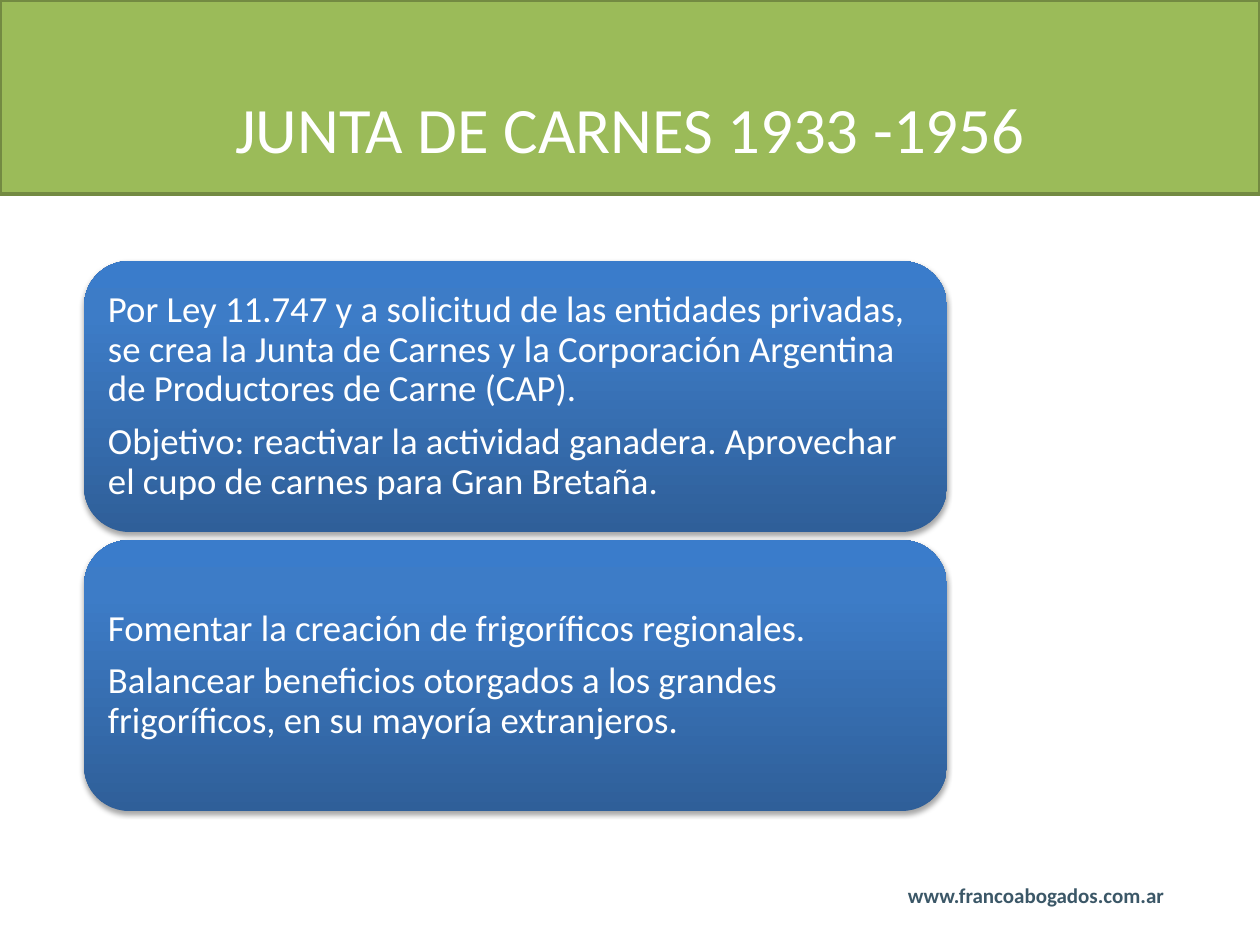
from lxml import etree
from pptx import Presentation
from pptx.dml.color import RGBColor
from pptx.enum import shapes, text
from pptx.oxml import parse_xml
from pptx.oxml.ns import nsdecls, qn
from pptx import util as u

PX_PER_INCH = 126


def px(length):
    return u.Emu(round(length * 914400 / PX_PER_INCH))


def color(value):
    return RGBColor.from_string(value)


class SlideBuilder:
    font = "Calibri"
    white = "FFFFFF"
    header_fill, header_line = "9BBB59", "738A42"
    footer_color = "3B5767"
    card_stops = [(0, "2F5F99"), (80, "3D7CC7"), (100, "3A7CCB")]

    def __init__(self, page):
        self.page = page

    def fill_text(self, box, paragraphs, size, ink, margins, bold=False, **formats):
        frame = box.text_frame
        settings = {"word_wrap": True, "vertical_anchor": text.MSO_ANCHOR.MIDDLE}
        sides = ("left", "top", "right", "bottom")
        settings.update({f"margin_{side}": px(m) for side, m in zip(sides, margins)})
        for name, value in settings.items():
            setattr(frame, name, value)
        for index, words in enumerate(paragraphs):
            para = frame.add_paragraph() if index else frame.paragraphs[0]
            for name, value in formats.items():
                setattr(para, name, value)
            span = para.add_run()
            span.text = words
            for name, value in {"name": self.font, "size": u.Pt(size), "bold": bold}.items():
                setattr(span.font, name, value)
            span.font.color.rgb = color(ink)

    def shape(self, kind, *place):
        shape = self.page.shapes.add_shape(kind, *map(px, place))
        shape.shadow.inherit = False
        return shape

    def text_box(self, place, paragraphs, size, ink, margins, **formats):
        box = self.page.shapes.add_textbox(*map(px, place))
        self.fill_text(box, paragraphs, size, ink, margins, **formats)

    def header(self, place, title):
        band = self.shape(shapes.MSO_SHAPE.RECTANGLE, *place)
        band.fill.solid()
        band.fill.fore_color.rgb = color(self.header_fill)
        band.line.color.rgb = color(self.header_line)
        band.line.width = u.Pt(2)
        # The deep top margin sets the title low in the band
        self.fill_text(band, [title], 37, self.white, (12, 77, 12, 6),
                       alignment=text.PP_ALIGN.CENTER, line_spacing=0.9)

    def card(self, left, top, width, height, paragraphs):
        card = self.shape(shapes.MSO_SHAPE.ROUNDED_RECTANGLE, left, top, width, height)
        card.line.fill.background()
        self.shade(card)
        inset = 13
        place = (left + inset, top + inset, width - 2 * inset, height - 2 * inset)
        self.text_box(place, paragraphs, 21, self.white, (11,) * 4,
                      alignment=text.PP_ALIGN.LEFT, line_spacing=0.9, space_after=u.Pt(7.35))

    def shade(self, card):
        """Three-stop upward gradient and a soft shadow below."""
        stops = "".join(f'<a:gs pos="{pos * 1000}"><a:srgbClr val="{ink}"/></a:gs>'
                        for pos, ink in self.card_stops)
        gradient = parse_xml(f'<a:gradFill {nsdecls("a")} rotWithShape="1"><a:gsLst>{stops}</a:gsLst>'
                             '<a:lin ang="16200000" scaled="0"/></a:gradFill>')
        properties = card.element.spPr
        properties.find(qn("a:prstGeom")).addnext(gradient)
        shadow = etree.SubElement(properties.find(qn("a:effectLst")), qn("a:outerShdw"),
                                  blurRad=str(int(u.Pt(3.1))), dist=str(int(u.Pt(1.8))),
                                  dir="5400000", rotWithShape="0")
        ink = etree.SubElement(shadow, qn("a:srgbClr"), val="000000")
        etree.SubElement(ink, qn("a:alpha"), val="35000")


def main():
    deck = Presentation()
    deck.slide_width, deck.slide_height = px(1260), px(945)
    builder = SlideBuilder(deck.slides.add_slide(deck.slide_layouts[6]))

    # Footer address
    builder.text_box((896, 876, 300, 38), ["www.francoabogados.com.ar"], 12,
                     builder.footer_color, (12, 6, 12, 6), bold=True)

    # Title band
    builder.header((0, 0, 1260, 194), "JUNTA DE CARNES 1933 -1956")

    # Stacked cards
    cards = [
        ["Por Ley 11.747 y a solicitud de las entidades privadas, se crea la Junta de Carnes "
         "y la Corporación Argentina de Productores de Carne (CAP).",
         "Objetivo: reactivar la actividad ganadera. Aprovechar el cupo de carnes para Gran Bretaña."],
        ["Fomentar la creación de frigoríficos regionales.",
         "Balancear beneficios otorgados a los grandes frigoríficos, en su mayoría extranjeros."],
    ]
    card_height, gap = 271, 8
    for row, paragraphs in enumerate(cards):
        builder.card(84, 261 + row * (card_height + gap), 863, card_height, paragraphs)

    deck.save("out.pptx")


if __name__ == "__main__":
    main()
